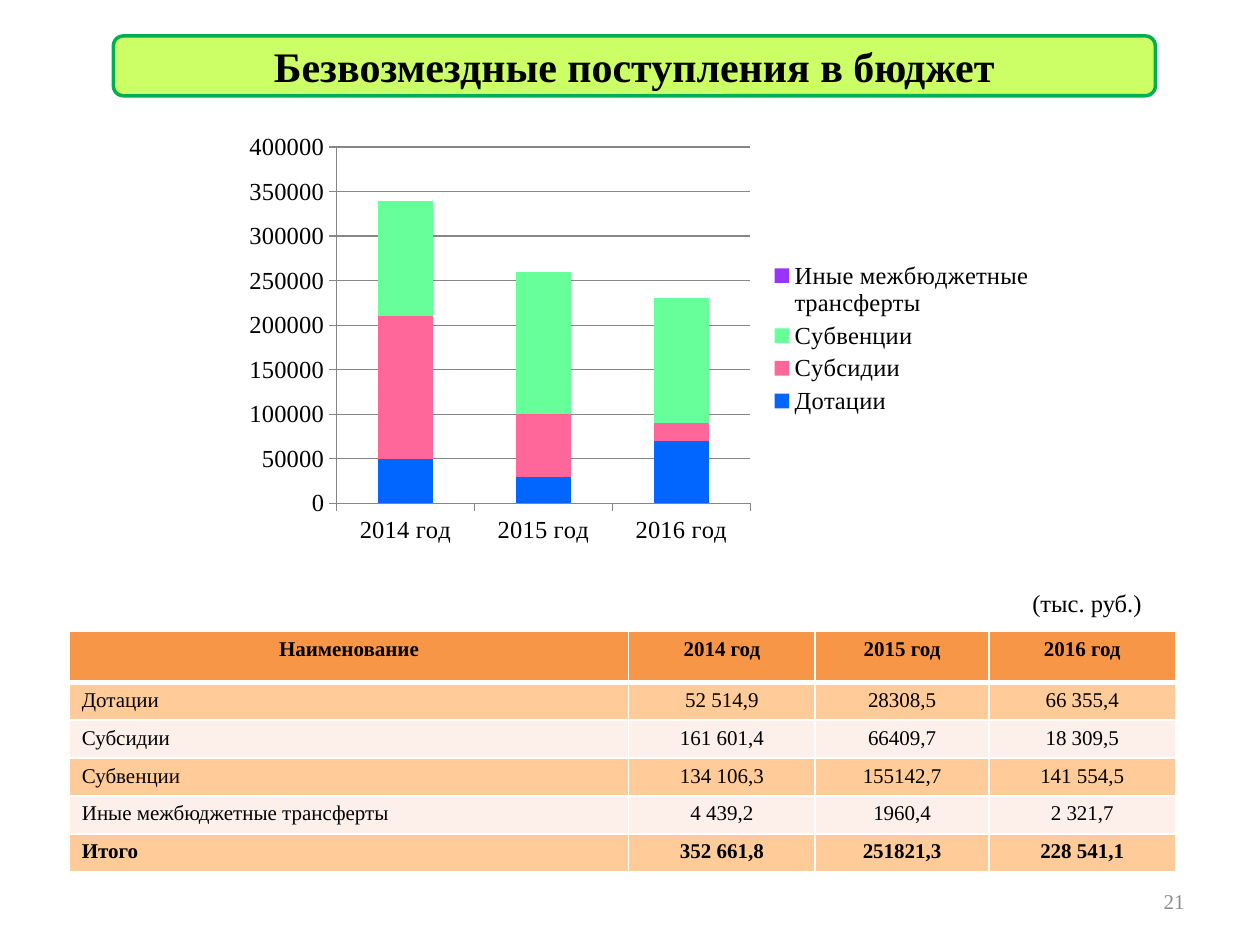
from typing import NamedTuple

from pptx import Presentation
from pptx.chart.data import CategoryChartData
from pptx.dml.color import RGBColor
from pptx.enum.chart import XL_CHART_TYPE, XL_LEGEND_POSITION, XL_TICK_MARK
from pptx.enum.shapes import MSO_SHAPE
from pptx.enum.text import MSO_ANCHOR, PP_ALIGN
from pptx.oxml import parse_xml
from pptx.oxml.ns import nsdecls
from pptx.util import Inches, Pt

FONT = "Times New Roman"
COLORS = {
    "text": "000000", "number": "8C8C8C", "axis": "868686",
    "banner": "CCFF66", "banner_line": "00B050",
    "header": "F79646", "band_dark": "FFCC99", "band_light": "FDEFE9",
    "border": "FFFFFF",
    "grants": "0066FF", "subsidies": "FF6699", "subventions": "66FF99", "transfers": "9933FF",
}
GRID_COLUMNS, GRID_ROWS = 100, 75


class Area(NamedTuple):
    """Left, top, width and height in grid columns and rows."""
    left: float
    top: float
    width: float
    height: float


class Income(NamedTuple):
    """Amounts for the table and rounded values for the chart."""
    name: str
    color: str
    amounts: tuple[str, ...]
    values: tuple[int, ...]


YEARS = ("2014 год", "2015 год", "2016 год")
INCOMES = (
    Income("Дотации", "grants",
           ("52 514,9", "28308,5", "66 355,4"), (50000, 30000, 70000)),
    Income("Субсидии", "subsidies",
           ("161 601,4", "66409,7", "18 309,5"), (160000, 70000, 20000)),
    Income("Субвенции", "subventions",
           ("134 106,3", "155142,7", "141 554,5"), (130000, 160000, 140000)),
    Income("Иные межбюджетные трансферты", "transfers",
           ("4 439,2", "1960,4", "2 321,7"), (0, 0, 0)),
)
TOTALS = ("352 661,8", "251821,3", "228 541,1")

deck = Presentation()
deck.slide_width, deck.slide_height = Inches(10), Inches(7.5)
page = deck.slides.add_slide(deck.slide_layouts[6])


def columns(count: float) -> int:
    return round(deck.slide_width * count / GRID_COLUMNS)


def rows(count: float) -> int:
    return round(deck.slide_height * count / GRID_ROWS)


def place(area: Area) -> tuple[int, int, int, int]:
    return columns(area.left), rows(area.top), columns(area.width), rows(area.height)


def color(name: str) -> RGBColor:
    return RGBColor.from_string(COLORS[name])


def set_font(font, size: float, ink: str = "text", bold: bool = False) -> None:
    font.name, font.size, font.bold = FONT, Pt(size), bold
    font.color.rgb = color(ink)


def write(frame, text: str, *, size: float = 12, ink: str = "text", bold: bool = False,
          align=PP_ALIGN.LEFT, anchor=MSO_ANCHOR.TOP, wrap: bool = True) -> None:
    frame.word_wrap, frame.vertical_anchor = wrap, anchor
    para = frame.paragraphs[0]
    para.alignment = align
    span = para.add_run()
    span.text = text
    set_font(span.font, size, ink, bold)


def add_banner(area: Area, text: str) -> None:
    banner = page.shapes.add_shape(MSO_SHAPE.ROUNDED_RECTANGLE, *place(area))
    banner.shadow.inherit = False
    banner.fill.solid()
    banner.fill.fore_color.rgb = color("banner")
    banner.line.color.rgb = color("banner_line")
    banner.line.width = Pt(2)
    write(banner.text_frame, text, size=24, bold=True,
          align=PP_ALIGN.CENTER, anchor=MSO_ANCHOR.MIDDLE)


def add_chart(area: Area) -> None:
    chart_data = CategoryChartData()
    chart_data.categories = YEARS
    for income in INCOMES:
        chart_data.add_series(income.name, income.values)
    chart = page.shapes.add_chart(XL_CHART_TYPE.COLUMN_STACKED, *place(area), chart_data).chart
    chart.has_title = False
    set_font(chart.font, 18)
    plot = chart.plots[0]
    plot.gap_width, plot.overlap, plot.vary_by_categories = 150, 100, False
    for series, income in zip(plot.series, INCOMES):
        series.format.fill.solid()
        series.format.fill.fore_color.rgb = color(income.color)

    # Axes and gridlines
    value_axis = chart.value_axis
    value_axis.minimum_scale, value_axis.maximum_scale, value_axis.major_unit = 0, 400000, 50000
    value_axis.has_major_gridlines = True
    value_axis.tick_labels.number_format = "General"
    value_axis.tick_labels.number_format_is_linked = False
    for axis in (chart.category_axis, value_axis):
        axis.major_tick_mark = XL_TICK_MARK.OUTSIDE
        set_font(axis.tick_labels.font, 14)
    for part in (chart.category_axis, value_axis, value_axis.major_gridlines):
        part.format.line.color.rgb = color("axis")
        part.format.line.width = Pt(0.75)

    chart.has_legend = True
    chart.legend.position = XL_LEGEND_POSITION.RIGHT
    chart.legend.include_in_layout = False
    set_font(chart.legend.font, 14)


def style_cell(cell, fill: str, bottom: float) -> None:
    cell.fill.solid()
    cell.fill.fore_color.rgb = color(fill)
    properties = cell._tc.get_or_add_tcPr()
    for index, (side, width) in enumerate(zip("LRTB", (1, 1, 1, bottom))):
        properties.insert(index, parse_xml(
            f'<a:ln{side} {nsdecls("a")} w="{Pt(width)}"><a:solidFill>'
            f'<a:srgbClr val="{COLORS["border"]}"/></a:solidFill></a:ln{side}>'))


def add_table(area: Area, widths: tuple[float, ...], header_height: float) -> None:
    lines = [("Наименование", *YEARS),
             *((income.name, *income.amounts) for income in INCOMES),
             ("Итого", *TOTALS)]
    table = page.shapes.add_table(len(lines), len(widths), *place(area)).table
    for column, width in zip(table.columns, widths):
        column.width = columns(width)
    last = len(lines) - 1
    for row, line in enumerate(lines):
        is_header = row == 0
        table.rows[row].height = rows(
            header_height if is_header else (area.height - header_height) / last)
        fill = "header" if is_header else "band_dark" if row % 2 else "band_light"
        for column, text in enumerate(line):
            cell = table.cell(row, column)
            style_cell(cell, fill, bottom=3 if is_header else 1)
            write(cell.text_frame, text, bold=row in (0, last),
                  align=PP_ALIGN.CENTER if is_header or column else PP_ALIGN.LEFT)


def add_label(area: Area, text: str, **text_format) -> None:
    box = page.shapes.add_textbox(*place(area))
    write(box.text_frame, text, **text_format)


# Title, chart, table with its unit, page number
add_banner(Area(9, 2.85, 82.7, 4.75), "Безвозмездные поступления в бюджет")
add_chart(Area(18.5, 9.9, 64.6, 33.9))
add_table(Area(5.5, 50.1, 87.8, 19.1), (44.4, 14.8, 13.8, 14.8), 4.05)
add_label(Area(80.95, 46.2, 10.8, 3.4), "(тыс. руб.)", size=14, wrap=False)
add_label(Area(71.7, 69.5, 23.3, 4), "21", ink="number",
          align=PP_ALIGN.RIGHT, anchor=MSO_ANCHOR.MIDDLE)

deck.save("out.pptx")
